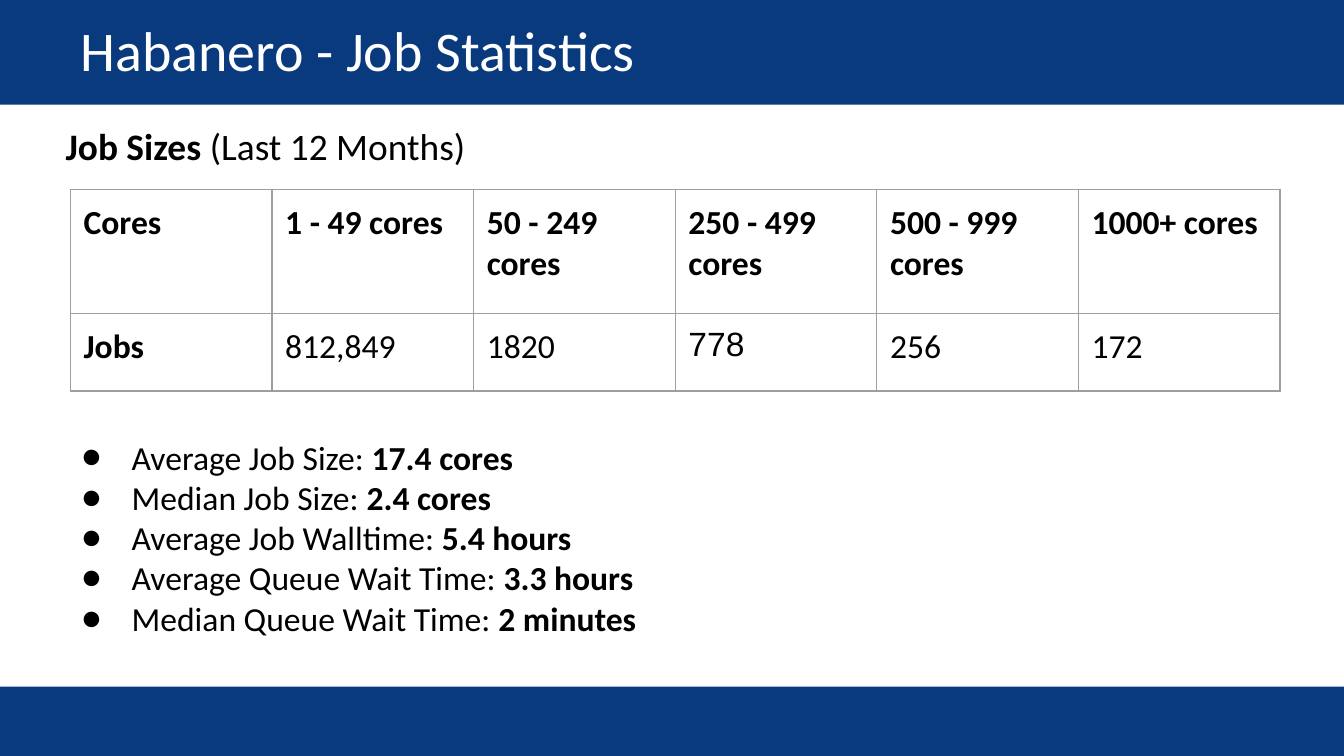
from dataclasses import dataclass

from lxml.etree import SubElement
from pptx import Presentation
from pptx.dml.color import RGBColor
from pptx.enum.shapes import MSO_SHAPE
from pptx.enum.text import MSO_ANCHOR
from pptx.oxml.ns import qn
from pptx.util import Cm, Pt

NAVY, BLACK, WHITE, GREY = "083A7D", "000000", "FFFFFF", "9E9E9E"
PAD = Cm(0.25)


@dataclass
class Box:
    left: float
    top: float
    width: float
    height: float

    def frame(self) -> tuple:
        return Cm(self.left), Cm(self.top), Cm(self.width), Cm(self.height)


@dataclass
class Fact:
    label: str
    value: str


@dataclass
class Group:
    cores: str
    jobs: str
    face: str = "Calibri"


BANDS = [Box(0, -0.03, 25.4, 2.01), Box(0, 12.98, 25.4, 1.35)]
GROUPS = [
    Group("1 - 49 cores", "812,849"),
    Group("50 - 249 cores", "1820"),
    Group("250 - 499 cores", "778", "Arial"),
    Group("500 - 999 cores", "256"),
    Group("1000+ cores", "172"),
]
FACTS = [
    Fact("Average Job Size: ", "17.4 cores"),
    Fact("Median Job Size: ", "2.4 cores"),
    Fact("Average Job Walltime: ", "5.4 hours"),
    Fact("Average Queue Wait Time: ", "3.3 hours"),
    Fact("Median Queue Wait Time: ", "2 minutes"),
]


def color(code: str) -> RGBColor:
    return RGBColor.from_string(code)


def style(para, size: float, code: str = BLACK, face: str = "Calibri") -> None:
    font = para.font
    font.name, font.size = face, Pt(size)
    font.color.rgb = color(code)


def pad(area) -> None:
    area.margin_left = area.margin_right = PAD
    area.margin_top = area.margin_bottom = PAD


def add_run(para, text: str, bold: bool = False) -> None:
    run = para.add_run()
    run.text = text
    run.font.bold = bold


def add_band(slide, box: Box) -> None:
    band = slide.shapes.add_shape(MSO_SHAPE.RECTANGLE, *box.frame())
    band.shadow.inherit = False
    band.fill.solid()
    band.fill.fore_color.rgb = color(NAVY)
    band.line.fill.background()


def add_text(slide, box: Box):
    frame = slide.shapes.add_textbox(*box.frame()).text_frame
    frame.word_wrap = True
    pad(frame)
    return frame


def add_dot(para) -> None:
    props = para._p.get_or_add_pPr()
    props.set("marL", str(Cm(1.27)))
    props.set("indent", str(-Cm(0.95)))
    tint = SubElement(props, qn("a:buClr"))
    SubElement(tint, qn("a:srgbClr"), val=BLACK)
    SubElement(props, qn("a:buFont"), typeface="Calibri")
    SubElement(props, qn("a:buChar"), char="●")


def fill_cell(cell, text: str, bold: bool, face: str = "Calibri") -> None:
    pad(cell)
    props = cell._tc.get_or_add_tcPr()
    for side in ("lnL", "lnR", "lnT", "lnB"):
        line = SubElement(props, qn(f"a:{side}"), w=str(Pt(0.75)))
        paint = SubElement(line, qn("a:solidFill"))
        SubElement(paint, qn("a:srgbClr"), val=GREY)
    cell.fill.background()
    para = cell.text_frame.paragraphs[0]
    para.text = text
    style(para, 18, face=face)
    para.font.bold = bold


def add_grid(slide, box: Box) -> None:
    count = len(GROUPS) + 1
    table = slide.shapes.add_table(2, count, *box.frame()).table
    table.first_row = table.horz_banding = False
    for col in table.columns:
        col.width = Cm(box.width / count)
    table.rows[0].height, table.rows[1].height = Cm(2.34), Cm(1.47)
    fill_cell(table.cell(0, 0), "Cores", True)
    fill_cell(table.cell(1, 0), "Jobs", True)
    for col, group in enumerate(GROUPS, 1):
        fill_cell(table.cell(0, col), group.cores, True)
        fill_cell(table.cell(1, col), group.jobs, False, group.face)


def add_facts(slide, box: Box) -> None:
    frame = add_text(slide, box)
    for num, fact in enumerate(FACTS):
        para = frame.add_paragraph() if num else frame.paragraphs[0]
        add_dot(para)
        style(para, 18)
        add_run(para, fact.label)
        add_run(para, fact.value, True)


def main() -> None:
    deck = Presentation()
    deck.slide_width, deck.slide_height = Cm(25.4), Cm(14.29)
    slide = deck.slides.add_slide(deck.slide_layouts[6])
    for band in BANDS:
        add_band(slide, band)

    title = add_text(slide, Box(1.27, 0.08, 22.86, 1.7))
    title.vertical_anchor = MSO_ANCHOR.MIDDLE
    para = title.paragraphs[0]
    para.text = "Habanero - Job Statistics"
    style(para, 30, WHITE)

    add_grid(slide, Box(1.33, 3.58, 22.86, 3.81))

    para = add_text(slide, Box(0.99, 2.08, 9.96, 1.9)).paragraphs[0]
    style(para, 20)
    add_run(para, "Job Sizes ", True)
    add_run(para, "(Last 12 Months)")

    add_facts(slide, Box(0.97, 8, 22.23, 4.93))
    deck.save("out.pptx")


if __name__ == "__main__":
    main()
